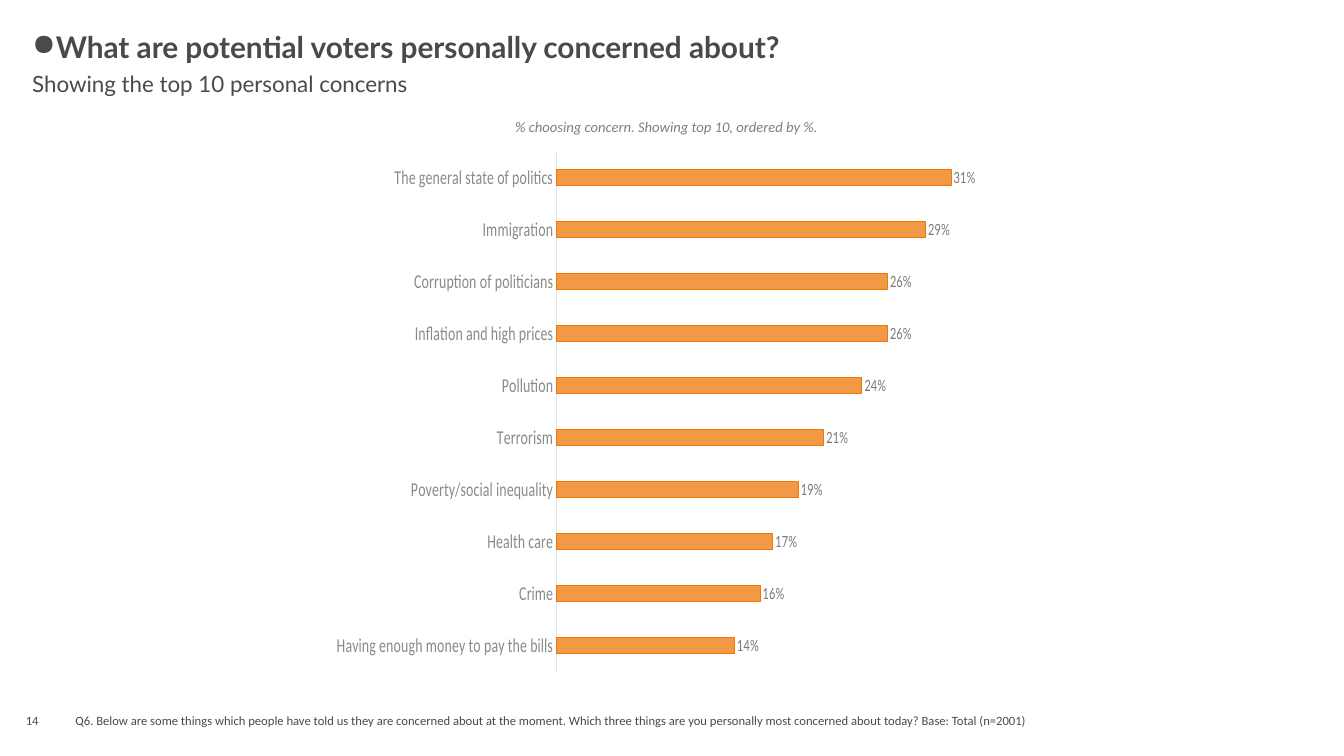
from dataclasses import dataclass

import lxml.etree
import pptx
import pptx.chart.data
import pptx.dml.color
import pptx.enum.chart
import pptx.enum.text
import pptx.oxml
import pptx.oxml.ns
import pptx.util

Pt = pptx.util.Pt
qn = pptx.oxml.ns.qn
ALIGN = pptx.enum.text.PP_ALIGN
ANCHOR = pptx.enum.text.MSO_ANCHOR

COLORS = {
    "title": "4A4A4A",
    "text": "4A4A49",
    "caption": "808080",
    "category": "8A8A88",
    "value": "787876",
    "axis": "E4E4E4",
    "bar": "EE7707",
}

CONCERNS = {
    "The general state of politics": 31,
    "Immigration": 29,
    "Corruption of politicians": 26,
    "Inflation and high prices": 26,
    "Pollution": 24,
    "Terrorism": 21,
    "Poverty/social inequality": 19,
    "Health care": 17,
    "Crime": 16,
    "Having enough money to pay the bills": 14,
}


@dataclass
class Note:
    text: str
    left: float
    top: float
    width: float
    height: float
    size: float
    font: str = "Calibri"
    color: str = "text"
    italic: bool = False
    side_inset: float = 7.2
    anchor: ANCHOR = ANCHOR.TOP
    align: ALIGN = ALIGN.LEFT


NOTES = [
    Note("14", 7.2, 500.4, 31.7, 28.8, 9, anchor=ANCHOR.MIDDLE, align=ALIGN.CENTER),
    Note("Q6. Below are some things which people have told us they are concerned about "
         "at the moment. Which three things are you personally most concerned about "
         "today? Base: Total (n=2001)",
         46.8, 500.4, 867.6, 28.8, 9, anchor=ANCHOR.MIDDLE),
    Note("% choosing concern. Showing top 10, ordered by %.",
         367.9, 80.6, 346.3, 20.2, 10.5, color="caption", italic=True, side_inset=0),
    Note("Showing the top 10 personal concerns",
         23, 46.8, 569.5, 26.6, 16, font="Lato", side_inset=0),
]


def rgb(name: str) -> pptx.dml.color.RGBColor:
    return pptx.dml.color.RGBColor.from_string(COLORS[name])


def style_font(font, name: str, size: float, color: str) -> None:
    font.name = name
    font.size = Pt(size)
    font.color.rgb = rgb(color)


def add_note(slide, note: Note) -> None:
    box = slide.shapes.add_textbox(
        Pt(note.left), Pt(note.top), Pt(note.width), Pt(note.height))
    frame = box.text_frame
    frame.word_wrap = True
    frame.margin_left = frame.margin_right = Pt(note.side_inset)
    frame.vertical_anchor = note.anchor
    frame.text = note.text
    paragraph = frame.paragraphs[0]
    paragraph.alignment = note.align
    font = paragraph.runs[0].font
    style_font(font, note.font, note.size, note.color)
    font.italic = note.italic


def set_title(slide) -> None:
    title = slide.shapes.title
    title.left, title.top = Pt(15.8), Pt(21.6)
    title.width, title.height = Pt(748.8), Pt(67.7)
    frame = title.text_frame
    frame.auto_size = pptx.enum.text.MSO_AUTO_SIZE.NONE
    frame.vertical_anchor = ANCHOR.TOP
    frame.text = "What are potential voters personally concerned about?"
    paragraph = frame.paragraphs[0]
    properties = paragraph._p.get_or_add_pPr()
    properties.set("marL", "0")
    properties.set("indent", str(-Pt(22)))
    bullet = lxml.etree.SubElement(properties, qn("a:buChar"))
    bullet.set("char", "●")
    paragraph.alignment = ALIGN.LEFT
    paragraph.line_spacing = 0.8
    font = paragraph.runs[0].font
    style_font(font, "Lato", 21.3, "title")
    font.bold = True


def set_plot_layout(chart, x: float, y: float, w: float, h: float) -> None:
    """Fix the inner plot area, as fractions of the chart."""
    plot_area = chart._chartSpace.chart.plotArea
    for old in plot_area.findall(qn("c:layout")):
        plot_area.remove(old)
    layout = lxml.etree.Element(qn("c:layout"))
    manual = lxml.etree.SubElement(layout, qn("c:manualLayout"))
    settings = {"layoutTarget": "inner", "xMode": "edge", "yMode": "edge",
                "x": x, "y": y, "w": w, "h": h}
    for tag, value in settings.items():
        lxml.etree.SubElement(manual, qn(f"c:{tag}")).set("val", str(value))
    plot_area.insert(0, layout)


def add_concerns_chart(slide) -> None:
    data = pptx.chart.data.CategoryChartData(number_format='0"%"')
    data.categories = list(CONCERNS)
    data.add_series("Series 1", list(CONCERNS.values()))
    chart = slide.shapes.add_chart(
        pptx.enum.chart.XL_CHART_TYPE.BAR_CLUSTERED,
        Pt(240.5), Pt(86.4), Pt(520.6), Pt(393.8), data).chart
    chart.has_legend = False
    chart.has_title = False
    style_font(chart.font, "Lato", 10, "text")
    set_plot_layout(chart, 0.048, 0.055, 0.984, 0.945)

    concern_axis = chart.category_axis
    concern_axis.reverse_order = True
    concern_axis.major_tick_mark = pptx.enum.chart.XL_TICK_MARK.NONE
    concern_axis.format.line.color.rgb = rgb("axis")
    concern_axis.format.line.width = Pt(0.75)
    style_font(concern_axis.tick_labels.font, "Calibri", 14, "category")

    share_axis = chart.value_axis
    share_axis.visible = False
    share_axis.has_major_gridlines = False
    share_axis.minimum_scale, share_axis.maximum_scale = 0, 40

    plot = chart.plots[0]
    plot.gap_width = 219
    plot.vary_by_categories = False
    bars = plot.series[0]
    bars.format.fill.solid()
    bars.format.fill.fore_color.rgb = rgb("bar")
    fill_color = bars._element.spPr.find(qn("a:solidFill"))[0]
    lxml.etree.SubElement(fill_color, qn("a:alpha")).set("val", "75000")
    bars.format.line.color.rgb = rgb("bar")
    bars.format.line.width = Pt(0.75)

    labels = bars.data_labels
    labels.show_value = True
    labels.number_format = '0"%"'
    labels.number_format_is_linked = False
    labels.position = pptx.enum.chart.XL_LABEL_POSITION.OUTSIDE_END
    style_font(labels.font, "Lato", 11, "value")


def main() -> None:
    deck = pptx.Presentation()
    deck.slide_width, deck.slide_height = Pt(960), Pt(540)
    slide = deck.slides.add_slide(deck.slide_layouts.get_by_name("Title Only"))
    set_title(slide)
    add_concerns_chart(slide)
    for note in NOTES:
        add_note(slide, note)
    deck.save("out.pptx")


if __name__ == "__main__":
    main()
